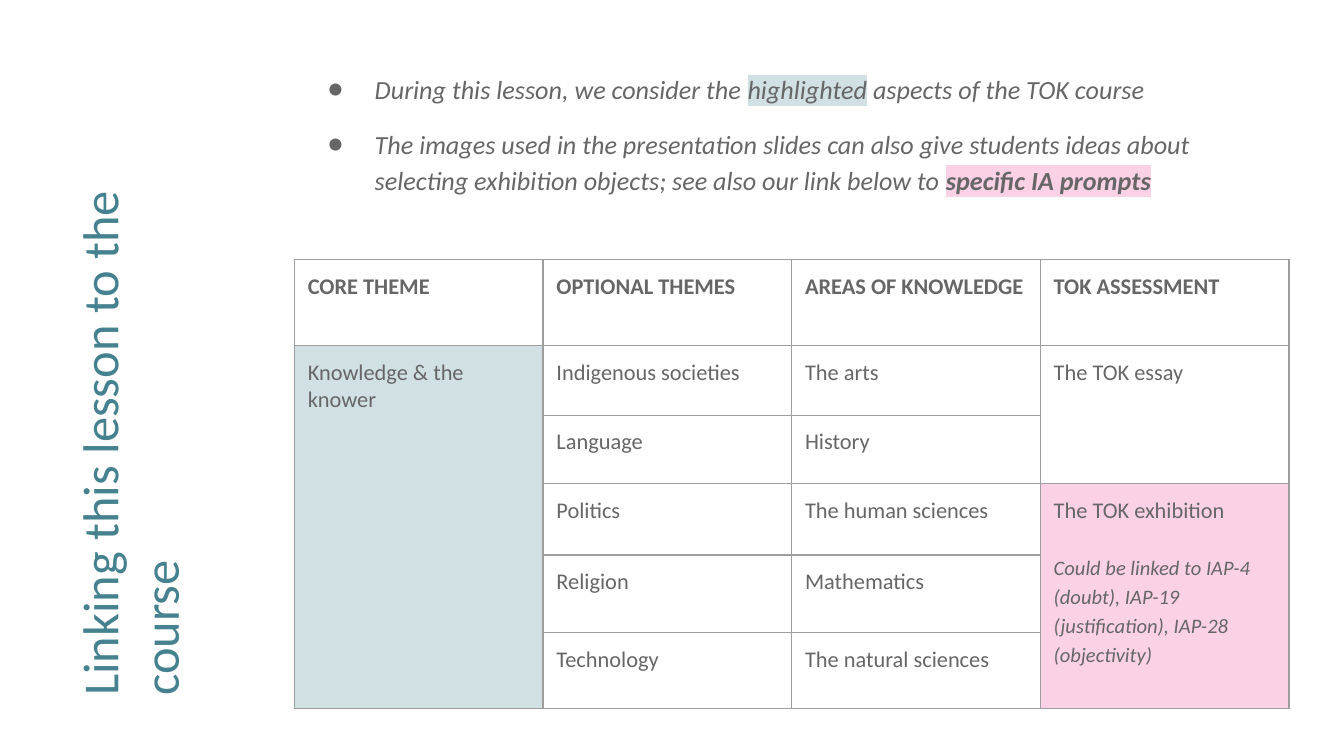
from dataclasses import dataclass

from lxml import etree
from pptx import Presentation
from pptx.dml.color import RGBColor
from pptx.enum.text import MSO_ANCHOR
from pptx.oxml.ns import qn
from pptx.util import Inches, Pt

TOP = MSO_ANCHOR.TOP


@dataclass(frozen=True)
class Theme:
    font: str = "Calibri"
    title: str = "45818E"
    text: str = "666666"
    white: str = "FFFFFF"
    border: str = "9E9E9E"
    blue: str = "D0E0E3"
    pink: str = "FBD1E6"
    title_size: int = 27
    body_size: int = 14
    table_size: int = 12
    note_size: int = 11


theme = Theme()


def add_color(parent, tag, color):
    element = etree.SubElement(parent, qn(tag))
    etree.SubElement(element, qn("a:srgbClr"), val=color)
    return element


def add_run(paragraph, text, size, color=theme.text, highlight=None, **styles):
    run = paragraph.add_run()
    run.text = text
    run.font.color.rgb = RGBColor.from_string(color)
    for name, value in {"name": theme.font, "size": Pt(size), **styles}.items():
        setattr(run.font, name, value)
    if highlight:
        properties = run.font._element
        mark = add_color(properties, "a:highlight", highlight)
        properties.find(qn("a:latin")).addprevious(mark)


presentation = Presentation()
presentation.slide_width = Inches(10)
presentation.slide_height = Inches(10 * 9 / 16)
slide = presentation.slides.add_slide(presentation.slide_layouts[6])

margin = Inches(0.1)
margins = {
    f"margin_{side}": margin for side in ("left", "right", "top", "bottom")
}
frame_format = {"word_wrap": True, "vertical_anchor": TOP, **margins}

title_box = slide.shapes.add_textbox(
    Inches(-1.32), Inches(2.13), Inches(4.87), Inches(1.42)
)
title_box.rotation = 270
body_box = slide.shapes.add_textbox(
    Inches(2.19), Inches(0.41), Inches(7.47), Inches(1.22)
)
for box in (title_box, body_box):
    for name, value in frame_format.items():
        setattr(box.text_frame, name, value)

add_run(
    title_box.text_frame.paragraphs[0],
    "Linking this lesson to the course",
    theme.title_size,
    theme.title,
)

bullets = [
    [
        ("During this lesson, we consider the ", {}),
        ("highlighted", {"highlight": theme.blue}),
        (" aspects of the TOK course", {}),
    ],
    [
        (
            "The images used in the presentation slides can also give students "
            "ideas about selecting exhibition objects; see also our link below to ",
            {},
        ),
        ("specific IA prompts", {"highlight": theme.pink, "bold": True}),
    ],
]
for index, pieces in enumerate(bullets):
    frame = body_box.text_frame
    paragraph = frame.add_paragraph() if index else frame.paragraphs[0]
    properties = paragraph._p.get_or_add_pPr()
    properties.set("marL", str(Inches(0.5)))
    properties.set("indent", str(Inches(-0.35)))
    add_color(properties, "a:buClr", theme.text)
    etree.SubElement(properties, qn("a:buFont"), typeface=theme.font)
    etree.SubElement(properties, qn("a:buChar"), char="●")
    paragraph.line_spacing = 1.15
    if index:
        paragraph.space_before = paragraph.space_after = Pt(10)
    for text, styles in pieces:
        add_run(paragraph, text, theme.body_size, italic=True, **styles)

rows = [
    ["CORE THEME", "OPTIONAL THEMES", "AREAS OF KNOWLEDGE", "TOK ASSESSMENT"],
    ["Knowledge & the knower", "Indigenous societies", "The arts", "The TOK essay"],
    ["", "Language", "History", ""],
    ["", "Politics", "The human sciences", "The TOK exhibition"],
    ["", "Religion", "Mathematics", ""],
    ["", "Technology", "The natural sciences", ""],
]
row_heights = [0.64, 0.52, 0.51, 0.53, 0.58, 0.56]
column_width = 1.85
fills = {(1, 0): theme.blue, (3, 3): theme.pink}
merges = [(1, 5, 0), (1, 2, 3), (3, 5, 3)]

table = slide.shapes.add_table(
    len(rows),
    len(rows[0]),
    Inches(2.19),
    Inches(1.93),
    Inches(column_width * len(rows[0])),
    Inches(sum(row_heights)),
).table
table.first_row = table.horz_banding = False
for column in table.columns:
    column.width = Inches(column_width)

for row_index, (texts, height) in enumerate(zip(rows, row_heights)):
    table.rows[row_index].height = Inches(height)
    for column_index, text in enumerate(texts):
        cell = table.cell(row_index, column_index)
        for name, value in {"vertical_anchor": TOP, **margins}.items():
            setattr(cell, name, value)
        properties = cell._tc.get_or_add_tcPr()
        for tag in ("a:lnL", "a:lnR", "a:lnT", "a:lnB"):
            line = etree.SubElement(properties, qn(tag), w=str(Pt(0.75)))
            add_color(line, "a:solidFill", theme.border)
        cell.fill.solid()
        cell.fill.fore_color.rgb = RGBColor.from_string(
            fills.get((row_index, column_index), theme.white)
        )
        if text:
            add_run(
                cell.text_frame.paragraphs[0],
                text,
                theme.table_size,
                bold=row_index == 0,
            )

for first, last, column_index in merges:
    table.cell(first, column_index).merge(table.cell(last, column_index))

note = table.cell(3, 3).text_frame.add_paragraph()
note.line_spacing = 1.15
note.space_before = Pt(14.5)
add_run(
    note,
    "Could be linked to IAP-4 (doubt), IAP-19 (justification), IAP-28 (objectivity)",
    theme.note_size,
    italic=True,
)

presentation.save("out.pptx")
